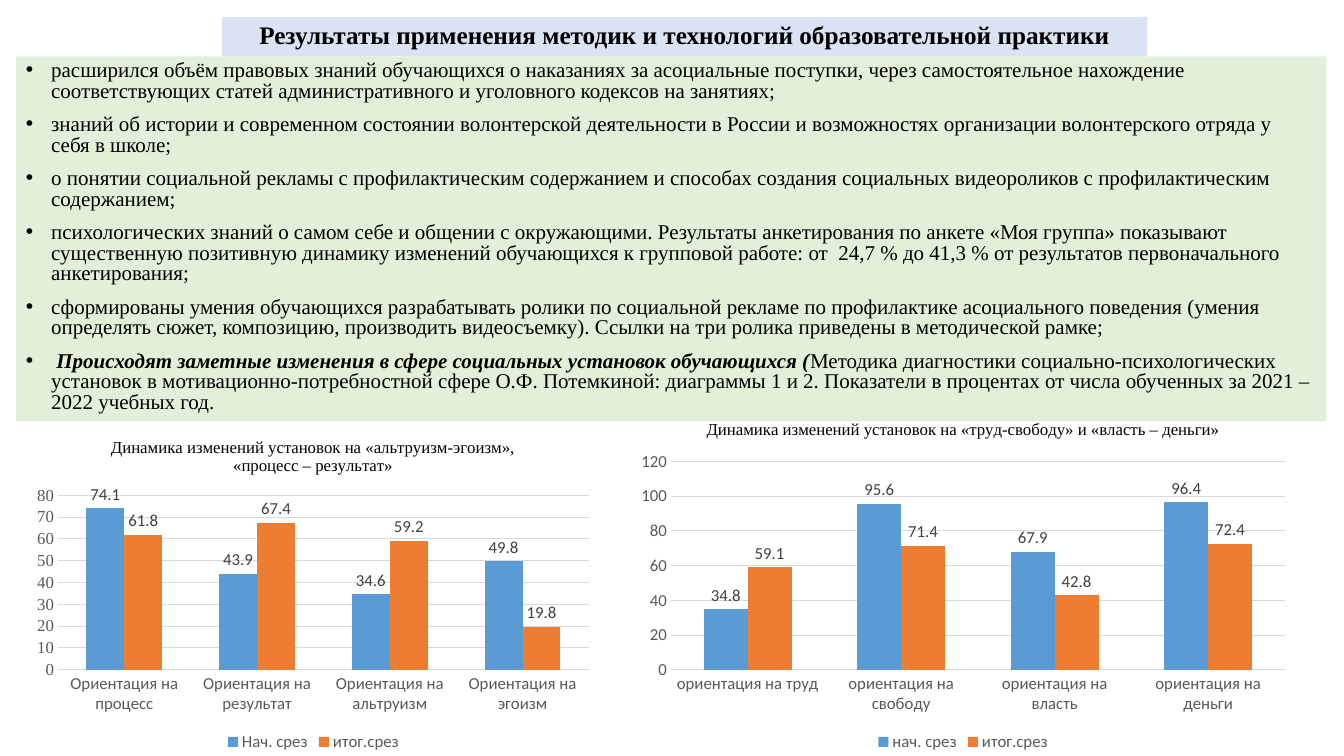
from lxml import etree
from pptx import Presentation
from pptx.chart.data import CategoryChartData as ChartData
from pptx.dml.color import RGBColor as RGB
from pptx.enum.chart import XL_CHART_TYPE as KIND, XL_LABEL_POSITION as SPOT
from pptx.enum.chart import XL_LEGEND_POSITION as SIDE, XL_TICK_MARK as TICK
from pptx.enum.shapes import MSO_SHAPE as SHAPE
from pptx.enum.text import MSO_ANCHOR as ANCHOR, PP_ALIGN as ALIGN
from pptx.oxml.ns import qn
from pptx.util import Pt

BLACK = RGB(0, 0, 0)
GRAY = RGB(0x59, 0x59, 0x59)
DARK = RGB(0x40, 0x40, 0x40)
GRID = RGB(0xD9, 0xD9, 0xD9)
BLUE = RGB(0x5B, 0x9B, 0xD5)
ORANGE = RGB(0xED, 0x7D, 0x31)
PALE = RGB(0xDA, 0xE3, 0xF3)
GREEN = RGB(0xE2, 0xF0, 0xD9)
SERIF = "Times New Roman"
SANS = "Calibri"

HEAD = "Результаты применения методик и технологий образовательной практики"
POINTS = [
    "расширился объём правовых знаний обучающихся о наказаниях за асоциальные поступки, через самостоятельное нахождение соответствующих статей административного и уголовного кодексов на занятиях;",
    "знаний об истории и современном состоянии волонтерской деятельности в России и возможностях организации волонтерского отряда у себя в школе;",
    "о понятии социальной рекламы с профилактическим содержанием и способах создания социальных видеороликов с профилактическим содержанием;",
    "психологических знаний о самом себе и общении с окружающими. Результаты анкетирования по анкете «Моя группа» показывают существенную позитивную динамику изменений обучающихся к групповой работе: от  24,7 % до 41,3 % от результатов первоначального анкетирования;",
    "сформированы умения обучающихся разрабатывать ролики по социальной рекламе по профилактике асоциального поведения (умения определять сюжет, композицию, производить видеосъемку). Ссылки на три ролика приведены в методической рамке;",
]
STRESS = " Происходят заметные изменения в сфере социальных установок обучающихся ("
REST = "Методика диагностики социально-психологических установок в мотивационно-потребностной сфере О.Ф. Потемкиной: диаграммы 1 и 2. Показатели в процентах от числа обученных за 2021 – 2022 учебных год."


def style(font, size=12, name=SANS, color=GRAY, bold=False, italic=False):
    font.size, font.name = Pt(size), name
    font.bold, font.italic = bold, italic
    font.color.rgb = color


def write(para, text, **form):
    run = para.add_run()
    run.text = text
    style(run.font, **form)


def add_box(slide, left, top, width, height, fill, anchor):
    box = slide.shapes.add_shape(SHAPE.RECTANGLE, Pt(left), Pt(top), Pt(width), Pt(height))
    box.shadow.inherit = False
    box.fill.solid()
    box.fill.fore_color.rgb = fill
    box.line.fill.background()
    frame = box.text_frame
    frame.word_wrap = True
    frame.vertical_anchor = anchor
    return frame


def set_bullet(para):
    props = para._p.get_or_add_pPr()
    props.set("marL", str(Pt(18)))
    props.set("indent", str(-Pt(18)))
    etree.SubElement(props, qn("a:buFont"), typeface="Arial")
    etree.SubElement(props, qn("a:buChar"), char="•")


def add_list(frame, items):
    """Each item is a list of (text, bold italic) pairs."""
    frame.margin_right = Pt(10)
    for num, item in enumerate(items):
        para = frame.add_paragraph() if num else frame.paragraphs[0]
        para.alignment = ALIGN.LEFT
        para.line_spacing = 0.81
        para.space_before = Pt(9.5 if num else 0)
        set_bullet(para)
        for text, strong in item:
            write(para, text, size=15, name=SERIF, color=BLACK, bold=strong, italic=strong)


def set_place(owner, box, place):
    """Fix a chart part at points from the chart's top left corner."""
    for old in owner.findall(qn("c:layout")):
        owner.remove(old)
    layout = etree.Element(qn("c:layout"))
    manual = etree.SubElement(layout, qn("c:manualLayout"))
    if len(place) == 4:
        etree.SubElement(manual, qn("c:layoutTarget"), val="inner")
    for key in ("x", "y"):
        etree.SubElement(manual, qn(f"c:{key}Mode"), val="edge")
    for key, part, full in zip("xywh", place, box[2:] * 2):
        etree.SubElement(manual, qn(f"c:{key}"), val=str(part / full))
    text = owner.find(qn("c:tx"))
    if text is None:
        owner.insert(0, layout)
    else:
        text.addnext(layout)


def set_axes(chart, top, step, face):
    cat, val = chart.category_axis, chart.value_axis
    for axis, name in ((cat, SANS), (val, face)):
        axis.major_tick_mark = axis.minor_tick_mark = TICK.NONE
        axis.format.line.fill.background()
        style(axis.tick_labels.font, name=name)
    val.minimum_scale, val.maximum_scale, val.major_unit = 0, top, step
    line = val.major_gridlines.format.line
    line.color.rgb, line.width = GRID, Pt(0.75)


def add_bars(slide, box, title, cats, rows, scale, spot, plot, face=SANS):
    data = ChartData()
    data.categories = cats
    for name, vals in rows:
        data.add_series(name, vals)
    chart = slide.shapes.add_chart(KIND.COLUMN_CLUSTERED, *map(Pt, box), data).chart
    style(chart.font, size=10, color=BLACK)
    head = chart.chart_title
    write(head.text_frame.paragraphs[0], title, name=SERIF, color=BLACK)
    head.include_in_layout = False
    set_place(head._element, box, spot)
    set_place(chart._chartSpace.chart.plotArea, box, plot)
    set_axes(chart, *scale, face)
    chart.has_legend = True
    chart.legend.position = SIDE.BOTTOM
    chart.legend.include_in_layout = False
    style(chart.legend.font)
    bars = chart.plots[0]
    bars.gap_width, bars.overlap, bars.vary_by_categories = 150, 0, False
    for row, color in zip(bars.series, (BLUE, ORANGE)):
        row.format.fill.solid()
        row.format.fill.fore_color.rgb = color
        row.invert_if_negative = False
        tags = row.data_labels
        tags.show_value = True
        tags.position = SPOT.OUTSIDE_END
        style(tags.font, color=DARK)


def main():
    deck = Presentation()
    deck.slide_width, deck.slide_height = Pt(960), Pt(540)
    slide = deck.slides.add_slide(deck.slide_layouts[6])

    para = add_box(slide, 158.4, 12.2, 661, 28.1, PALE, ANCHOR.MIDDLE).paragraphs[0]
    para.alignment, para.line_spacing = ALIGN.CENTER, 0.9
    write(para, HEAD, size=18, name=SERIF, color=BLACK, bold=True)

    frame = add_box(slide, 11.5, 40.3, 936, 260.7, GREEN, ANCHOR.TOP)
    add_list(frame, [[(text, False)] for text in POINTS] + [[(STRESS, True), (REST, False)]])

    add_bars(
        slide, (18.7, 301.7, 410.4, 238.3),
        "Динамика изменений установок на «альтруизм-эгоизм», «процесс – результат»",
        [f"Ориентация на {aim}" for aim in ("процесс", "результат", "альтруизм", "эгоизм")],
        [("Нач. срез", (74.1, 43.9, 34.6, 49.8)), ("итог.срез", (61.8, 67.4, 59.2, 19.8))],
        (80, 10), (58.3, 8.4), (22.7, 52.2, 379.3, 124.6), face=SERIF)
    add_bars(
        slide, (448.6, 288.7, 478.8, 251.3),
        "Динамика изменений установок на «труд-свободу» и «власть – деньги»",
        [f"ориентация на {aim}" for aim in ("труд", "свободу", "власть", "деньги")],
        [("нач. срез", (34.8, 95.6, 67.9, 96.4)), ("итог.срез", (59.1, 71.4, 42.8, 72.4))],
        (120, 20), (53.9, 8.4), (30.7, 40.9, 438.6, 148.9))

    deck.save("out.pptx")


if __name__ == "__main__":
    main()
